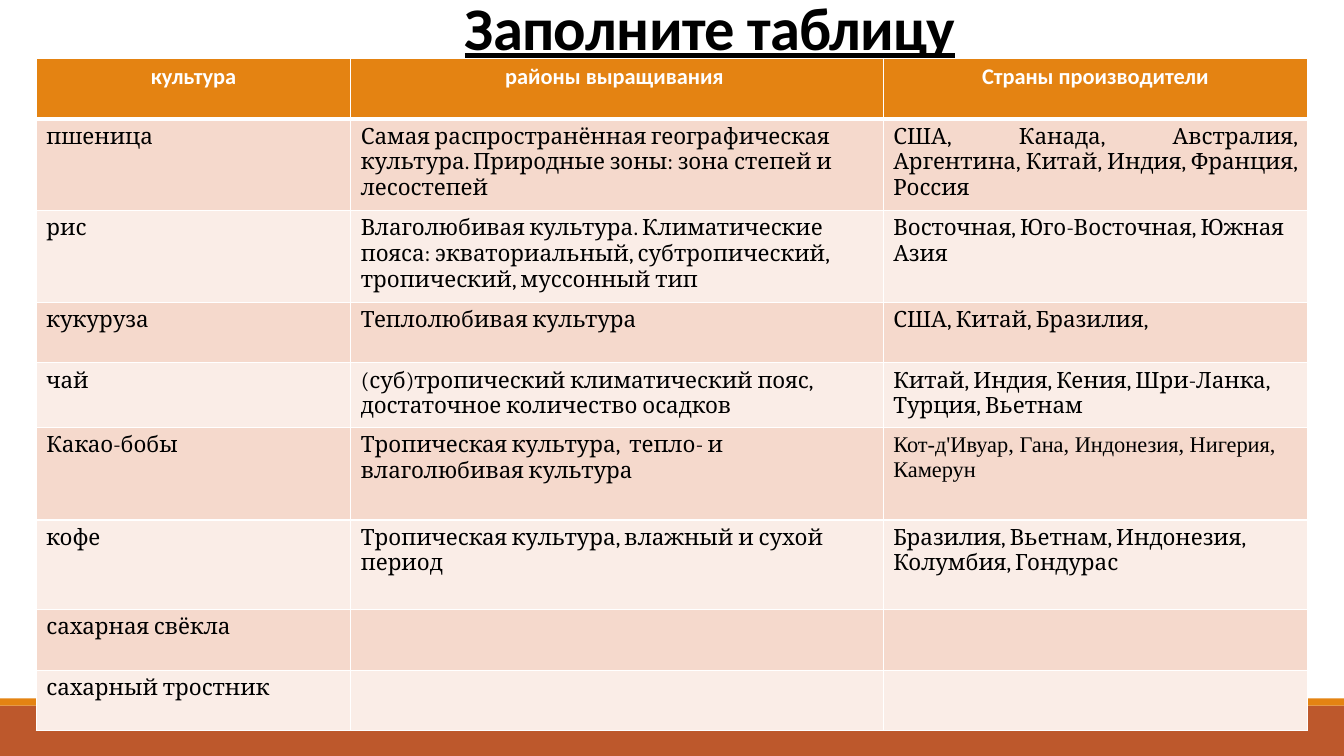
from lxml.etree import SubElement
from pptx import Presentation
from pptx.dml.color import RGBColor
from pptx.enum.shapes import MSO_SHAPE
from pptx.enum.text import MSO_ANCHOR, PP_ALIGN
from pptx.oxml.ns import qn
from pptx.util import Inches, Pt

TITLE = "Заполните таблицу"
HEADER = ["культура", "районы выращивания ", "Страны производители"]
CROPS = [
    ("пшеница",
     "Самая распространённая географическая культура. Природные зоны: зона степей и лесостепей",
     "США, Канада, Австралия, Аргентина, Китай, Индия, Франция, Россия"),
    ("рис",
     "Влаголюбивая культура. Климатические пояса: экваториальный, субтропический, "
     "тропический, муссонный тип",
     "Восточная, Юго-Восточная, Южная Азия"),
    ("кукуруза", "Теплолюбивая культура", "США, Китай, Бразилия,"),
    ("чай",
     "(суб)тропический климатический пояс, достаточное количество осадков",
     "Китай, Индия, Кения, Шри-Ланка, Турция, Вьетнам"),
    ("Какао-бобы",
     "Тропическая культура,  тепло- и влаголюбивая культура",
     "Кот-д'Ивуар, Гана, Индонезия, Нигерия, Камерун"),
    ("кофе",
     "Тропическая культура, влажный и сухой период",
     "Бразилия, Вьетнам, Индонезия, Колумбия, Гондурас"),
    ("сахарная свёкла", "", ""),
    ("сахарный тростник", "", ""),
]
COL_WIDTHS = [3.12, 5.28, 4.21]
ROW_HEIGHTS = [0.6, 0.91, 0.91, 0.6, 0.64, 0.92, 0.89, 0.6, 0.6]
COLORS = {"orange": "E48312", "rust": "BD582C", "odd": "F5D9CC", "even": "FAEDE7",
          "white": "FFFFFF", "black": "000000"}
BARS = [(7, 0.5, "rust"), (6.93, 0.07, "orange")]  # top, height, colour
JUSTIFIED = (1, 2)  # row, column of the wheat producers
TIMES_CELL = (5, 2)  # row, column of the cocoa producers


def rgb(name):
    return RGBColor.from_string(COLORS[name])


def set_font(font, color, **values):
    font.color.rgb = rgb(color)
    for name, value in values.items():
        setattr(font, name, value)


def set_borders(cell, bottom):
    tcPr = cell._tc.get_or_add_tcPr()
    for i, (side, width) in enumerate({"L": 1, "R": 1, "T": 1, "B": bottom}.items()):
        ln = SubElement(tcPr, qn(f"a:ln{side}"), w=str(Pt(width)))
        fill = SubElement(ln, qn("a:solidFill"))
        SubElement(fill, qn("a:srgbClr"), val=COLORS["white"])
        tcPr.insert(i, ln)


prs = Presentation()
prs.slide_width, prs.slide_height = Inches(13.33), Inches(7.5)
s = prs.slides.add_slide(prs.slide_layouts[5])

# Bottom bars
for top, height, color in BARS:
    bar = s.shapes.add_shape(MSO_SHAPE.RECTANGLE, 0, Inches(top), prs.slide_width, Inches(height))
    bar.shadow.inherit = False
    bar.fill.solid()
    bar.fill.fore_color.rgb = rgb(color)
    bar.line.fill.background()

# Title
title = s.shapes.title
title.left, title.top, title.width, title.height = map(Inches, (1.54, 0, 11, 0.67))
tf = title.text_frame
tf.text = TITLE
tf.vertical_anchor = MSO_ANCHOR.BOTTOM
p = tf.paragraphs[0]
p.alignment, p.line_spacing = PP_ALIGN.CENTER, 0.85
r = p.runs[0]
set_font(r.font, "black", name="Calibri", size=Pt(43.2), bold=True, underline=True)
r.font._element.set("spc", "-50")

# Crop table
rows = [HEADER, *CROPS]
table = s.shapes.add_table(len(rows), len(HEADER), Inches(0.36), Inches(0.58),
                           Inches(sum(COL_WIDTHS)), Inches(sum(ROW_HEIGHTS))).table
for column, width in zip(table.columns, COL_WIDTHS):
    column.width = Inches(width)
for i, (texts, height) in enumerate(zip(rows, ROW_HEIGHTS)):
    table.rows[i].height = Inches(height)
    head = i == 0
    for j, text in enumerate(texts):
        cell = table.cell(i, j)
        cell.fill.solid()
        cell.fill.fore_color.rgb = rgb("orange" if head else "odd" if i % 2 else "even")
        set_borders(cell, 3 if head else 1)
        if not text:
            continue
        cell.text = text
        p = cell.text_frame.paragraphs[0]
        if head:
            p.alignment = PP_ALIGN.CENTER
        elif (i, j) == JUSTIFIED:
            p.alignment = PP_ALIGN.JUSTIFY
        face = "Calibri" if head else "Times New Roman" if (i, j) == TIMES_CELL else "Cambria"
        set_font(p.runs[0].font, "white" if head else "black", name=face, size=Pt(16), bold=head)

prs.save("out.pptx")
